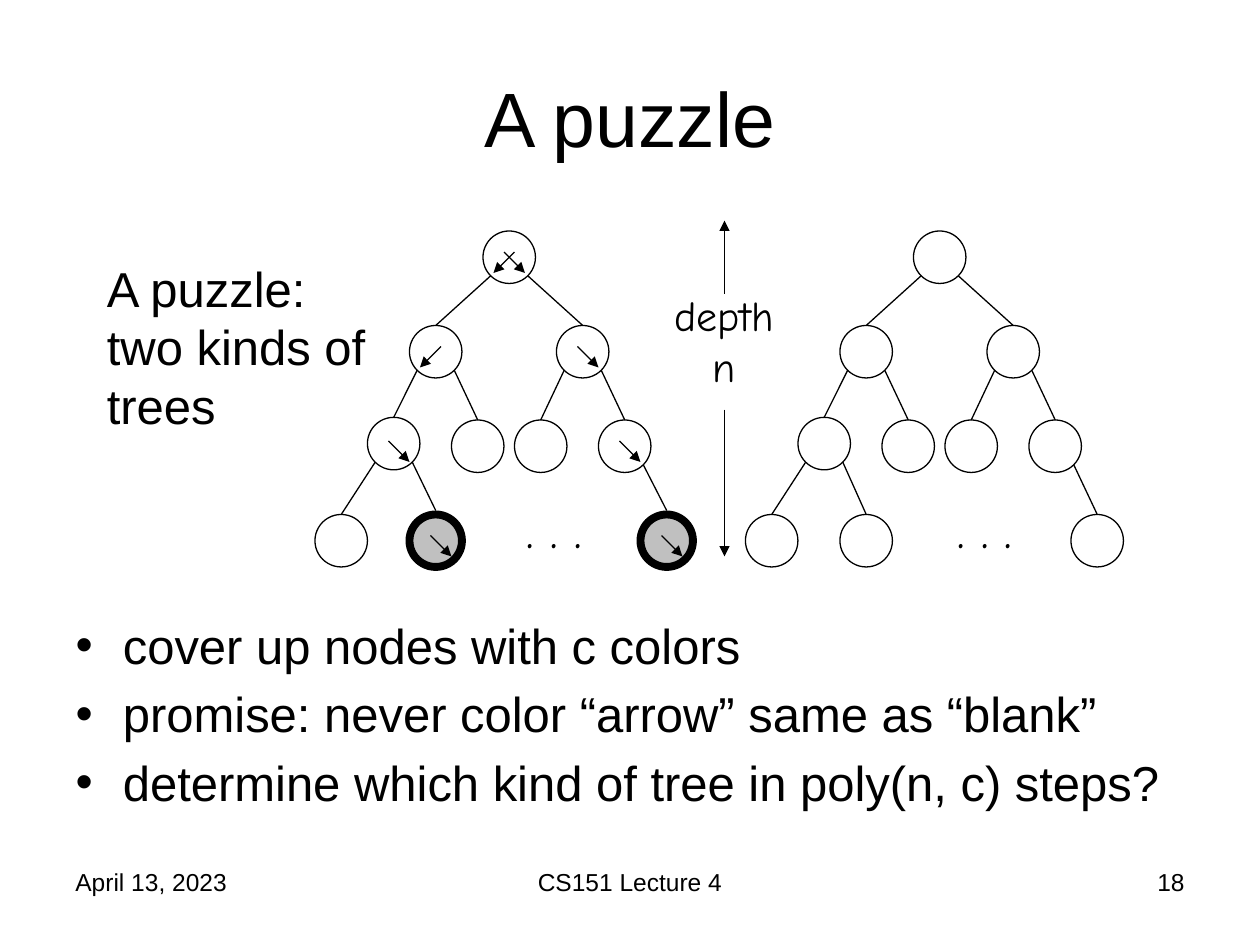
from dataclasses import dataclass
from math import sqrt

from lxml import etree
from pptx import Presentation
from pptx import util as u
from pptx.dml.color import RGBColor
from pptx.enum import shapes as sh
from pptx.enum import text as tx
from pptx.oxml import ns


@dataclass(frozen=True)
class Theme:
    ink: RGBColor = RGBColor(0, 0, 0)
    shade: RGBColor = RGBColor(0xC0, 0xC0, 0xC0)
    sans: str = "Arial"
    hand: str = "Comic Neue"
    title: int = 44
    body: int = 28
    depth: int = 24
    foot: int = 14
    thin: float = 0.75
    thick: float = 4.5


T = Theme()
SIZE = 5        # node diameter in grid units
SHIFT = 41      # columns between the two trees

# Nodes: column, row, parent, side of the parent, arrows in the left tree
NODES = [
    (46, 22, None, 0, "RL"),
    (39, 31, 0, -1, "L"),
    (53, 31, 0, 1, "R"),
    (35, 39.75, 1, -1, "R"),
    (43, 40, 1, 1, ""),
    (49, 40, 2, -1, ""),
    (57, 40, 2, 1, "R"),
    (30, 49, 3, -1, ""),
    (39, 49, 3, 1, "R"),
    (61, 49, 6, 1, "R"),
]
COVERED = {8, 9}


def grid(n):
    """Twelve grid units make one inch."""
    return u.Inches(n / 12)


def style(para, size, font=T.sans, align=None):
    para.font.size = u.Pt(size)
    para.font.name = font
    para.font.color.rgb = T.ink
    if align is not None:
        para.alignment = align


def place(shape, col, row, wide, high):
    shape.left, shape.top = grid(col), grid(row)
    shape.width, shape.height = grid(wide), grid(high)


def label(slide, words, box, size, font=T.sans, align=None, gap=0):
    shape = slide.shapes.add_textbox(*map(grid, box))
    frame = shape.text_frame
    frame.word_wrap = True
    frame.text = words
    para = frame.paragraphs[0]
    style(para, size, font, align)
    para.space_before = u.Pt(gap)


def line(slide, start, end, arrow=False):
    link = slide.shapes.add_connector(
        sh.MSO_CONNECTOR.STRAIGHT, *map(grid, (*start, *end)))
    link.line.color.rgb = T.ink
    link.line.width = u.Pt(T.thin)
    if arrow:
        tip = etree.SubElement(link.line._get_or_add_ln(), ns.qn("a:tailEnd"))
        tip.set("type", "triangle")
    etree.SubElement(link._element.spPr, ns.qn("a:effectLst"))


def node(slide, col, row, covered):
    ring = slide.shapes.add_shape(
        sh.MSO_SHAPE.OVAL, *map(grid, (col, row, SIZE, SIZE)))
    ring.shadow.inherit = False
    ring.line.color.rgb = T.ink
    ring.line.width = u.Pt(T.thick if covered else T.thin)
    if covered:
        ring.fill.solid()
        ring.fill.fore_color.rgb = T.shade
    else:
        ring.fill.background()


def tree(slide, shift=0, marked=False):
    half = SIZE / 2
    reach = half / sqrt(2)
    for i, (col, row, parent, side, marks) in enumerate(NODES):
        col += shift
        covered = marked and i in COVERED
        node(slide, col, row, covered)
        # Edge from the parent's lower diagonal to the top of this node
        if parent is not None:
            pcol, prow = NODES[parent][:2]
            start = (pcol + shift + half + side * reach, prow + half + reach)
            rim = T.thick / 2 / 6 if covered else 0
            line(slide, start, (col + half, row - rim))
        # Arrows inside the node
        for mark in marks if marked else "":
            near, far = (2, 4) if mark == "R" else (3, 1)
            top = round(row)
            line(slide, (col + near, top + 2), (col + far, top + 4), True)
    label(slide, ". . .", (49 + shift, 47, 11, 6.84), T.body, T.hand)


def main():
    deck = Presentation()
    deck.slide_width, deck.slide_height = u.Inches(10), u.Inches(7.5)
    slide = deck.slides.add_slide(deck.slide_layouts[1])

    # Title and list
    title, body = slide.placeholders
    place(title, 6, 3.6, 108, 15)
    title.text_frame.text = "A puzzle"
    style(title.text_frame.paragraphs[0], T.title, align=tx.PP_ALIGN.CENTER)
    place(body, 6, 58, 108, 22.4)
    frame = body.text_frame
    frame.auto_size = tx.MSO_AUTO_SIZE.NONE
    frame.text = "\n".join([
        "cover up nodes with c colors",
        "promise: never color “arrow” same as “blank”",
        "determine which kind of tree in poly(n, c) steps?",
    ])
    for para in frame.paragraphs:
        style(para, T.body)

    # Two trees
    tree(slide, marked=True)
    tree(slide, SHIFT)

    # Depth scale between the trees
    label(slide, "depth n", (62, 27, 14, 10.8), T.depth, T.hand,
          tx.PP_ALIGN.CENTER)
    line(slide, (69, 39), (69, 53), True)
    line(slide, (69, 28), (69, 21), True)

    label(slide, "A puzzle: two kinds of trees", (9, 24, 27, 18), T.body)

    # Footer
    for words, col, wide, align in [
        ("April 13, 2023", 6, 28, tx.PP_ALIGN.LEFT),
        ("CS151 Lecture 4", 41, 38, tx.PP_ALIGN.CENTER),
        ("18", 86, 28, tx.PP_ALIGN.RIGHT),
    ]:
        label(slide, words, (col, 82, wide, 6.25), T.foot, align=align)

    deck.save("out.pptx")


if __name__ == "__main__":
    main()
